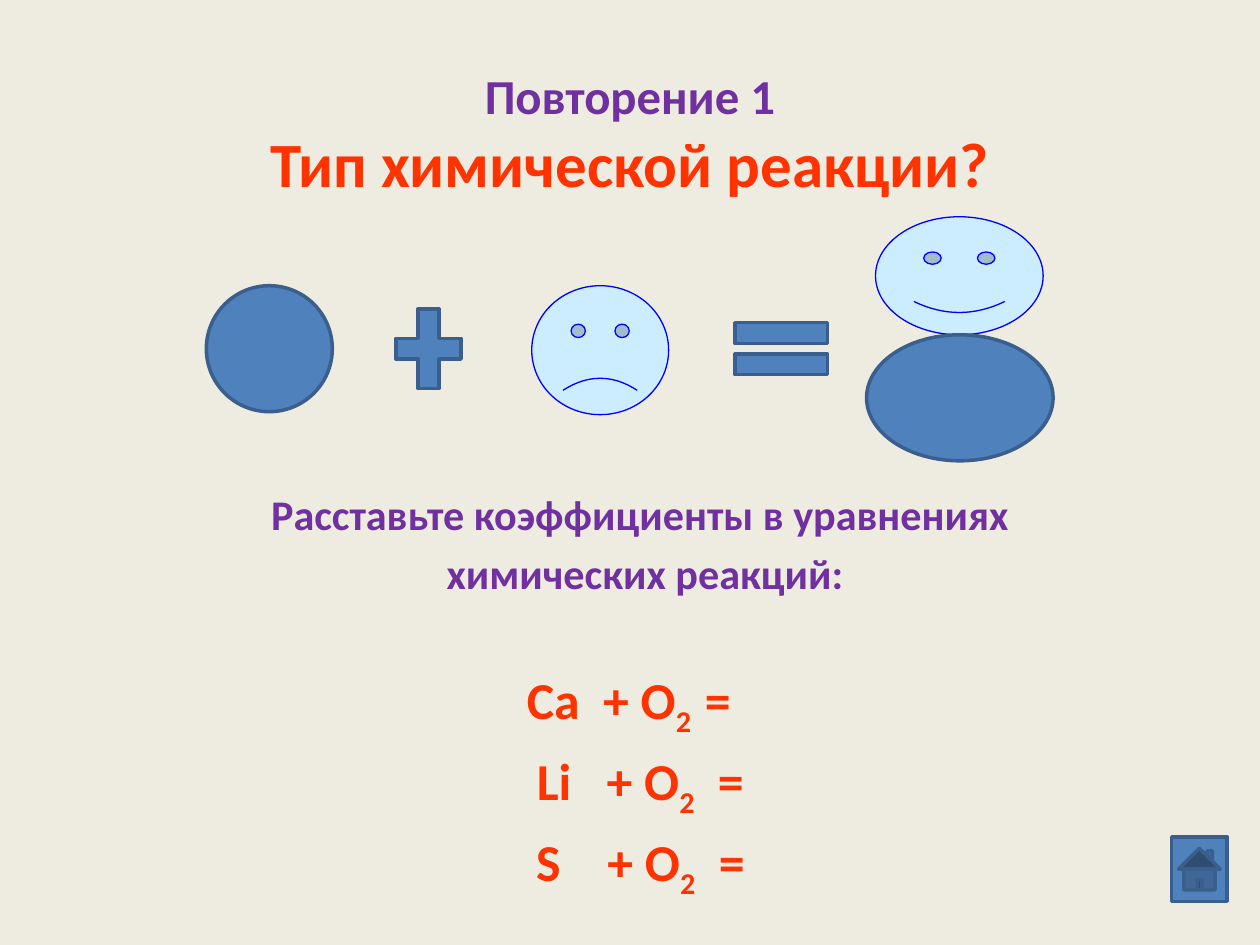
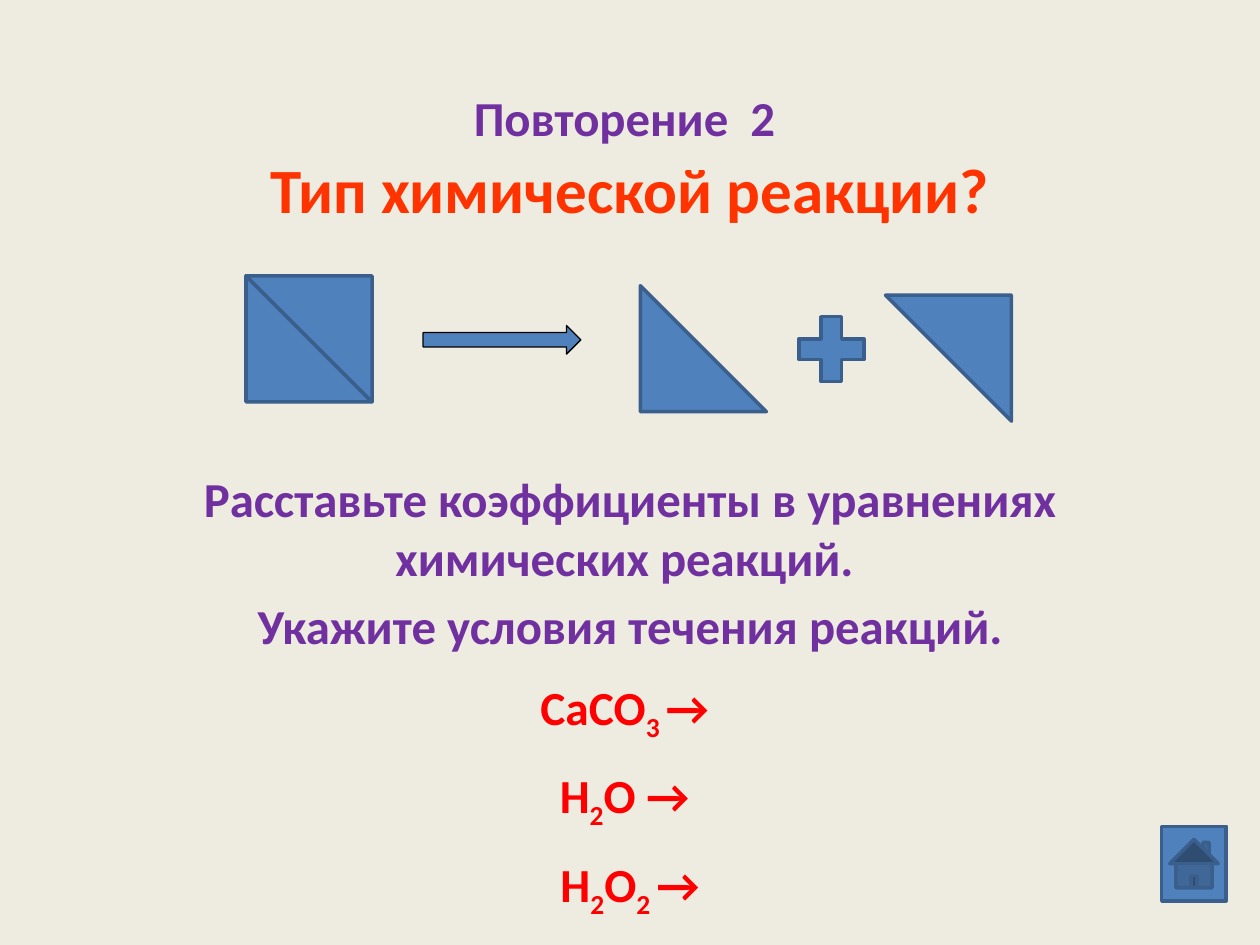
import pptx
import pptx.dml.color
import pptx.enum.shapes
import pptx.enum.text
import pptx.util

Cm = pptx.util.Cm
Pt = pptx.util.Pt
Kind = pptx.enum.shapes.MSO_SHAPE

BACKGROUND = "EEECE1"
PURPLE = "7030A0"
ORANGE = "FF3300"
RED = "FF0000"
BLUE_STYLE = ("4F81BD", "3A5F8C", 2)
FACE_STYLE = ("CCECFF", "0000FF", 0.75)
ARROW_STYLE = ("4F81BD", "000000", 0.75)
QUESTION = "Тип химической реакции?"


def color(hex_string):
    return pptx.dml.color.RGBColor.from_string(hex_string)


def fill_text(text_frame, lines):
    """Write (text, size, colour, space before) lines; parts between bars are subscripts."""
    text_frame.word_wrap = True
    text_frame.auto_size = pptx.enum.text.MSO_AUTO_SIZE.NONE
    for index, (text, size, text_color, space_before) in enumerate(lines):
        paragraph = text_frame.add_paragraph() if index else text_frame.paragraphs[0]
        paragraph.alignment = pptx.enum.text.PP_ALIGN.CENTER
        paragraph.space_before = Pt(space_before)
        paragraph.font.name = "Calibri"
        paragraph.font.size = Pt(size)
        paragraph.font.bold = True
        paragraph.font.color.rgb = color(text_color)
        for part_index, part in enumerate(text.split("|")):
            run = paragraph.add_run()
            run.text = part
            if part_index % 2:
                run.font._element.set("baseline", "-25000")


# Each shape: kind, (left, top, width, height) in cm, style, rotation, first adjustment
slide_plans = [
    {
        "title_box": (1.9, 1, 21.6, 3.18),
        "title_top_margin": 0.3,
        "title": [("Повторение 1", 27.9, PURPLE, 0), (QUESTION, 36, ORANGE, 0)],
        "body_box": (2.4, 9.72, 21.02, 8.74),
        "body": [
            ("Расставьте коэффициенты в уравнениях", 24.1, PURPLE, 4.8),
            (" химических реакций:", 24.1, PURPLE, 4.8),
            ("Ca  + O|2  |=  ", 29.6, ORANGE, 40),
            ("Li   + O|2|  =", 29.6, ORANGE, 5.9),
            ("S    + O|2|  =", 29.6, ORANGE, 5.9),
        ],
        "shapes": [
            (Kind.OVAL, (4.16, 5.76, 2.54, 2.54), BLUE_STYLE, 0, None),
            (Kind.SMILEY_FACE, (10.72, 5.76, 2.76, 2.6), FACE_STYLE, 0, -0.047),
            (Kind.SMILEY_FACE, (17.65, 4.37, 3.38, 2.38), FACE_STYLE, 0, 0.047),
            (Kind.OVAL, (17.47, 6.75, 3.76, 2.54), BLUE_STYLE, 0, None),
            (Kind.MATH_PLUS, (7.75, 5.94, 1.78, 2.18), BLUE_STYLE, 0, None),
            (Kind.MATH_EQUAL, (14.48, 6.14, 2.54, 1.78), BLUE_STYLE, 0, None),
            (Kind.ACTION_BUTTON_HOME, (23.62, 16.87, 1.12, 1.3), BLUE_STYLE, 0, None),
        ],
    },
    {
        "title_box": (1.9, 1, 21.6, 3.76),
        "title_top_margin": 0.69,
        "title": [("Повторение  2 ", 27.9, PURPLE, 0), (QUESTION, 36, ORANGE, 2)],
        "body_box": (3.81, 9.32, 17.78, 9.12),
        "body": [
            ("Расставьте коэффициенты в уравнениях химических реакций. ", 27.9, PURPLE, 5.6),
            ("Укажите условия течения реакций.", 27.9, PURPLE, 5.6),
            ("CaCO|3 |→ ", 27.1, RED, 13.6),
            ("H|2|O → ", 27.1, RED, 13.6),
            ("H|2|O|2 |→", 27.1, RED, 13.6),
        ],
        "shapes": [
            (Kind.RIGHT_TRIANGLE, (4.96, 5.56, 2.54, 2.54), BLUE_STYLE, 0, None),
            (Kind.RIGHT_TRIANGLE, (4.96, 5.56, 2.54, 2.54), BLUE_STYLE, 180, None),
            (Kind.RIGHT_ARROW, (8.53, 6.56, 3.18, 0.58), ARROW_STYLE, 0, None),
            (Kind.RIGHT_TRIANGLE, (12.91, 5.76, 2.54, 2.54), BLUE_STYLE, 0, None),
            (Kind.RIGHT_TRIANGLE, (17.85, 5.95, 2.54, 2.54), BLUE_STYLE, 180, None),
            (Kind.MATH_PLUS, (15.87, 6.15, 1.78, 1.78), BLUE_STYLE, 0, None),
            (Kind.ACTION_BUTTON_HOME, (23.42, 16.66, 1.3, 1.5), BLUE_STYLE, 0, None),
        ],
    },
]

presentation = pptx.Presentation()
presentation.slide_width = Cm(25.4)
presentation.slide_height = Cm(19.05)
background_fill = presentation.slide_master.background.fill
background_fill.solid()
background_fill.fore_color.rgb = color(BACKGROUND)

for plan in slide_plans:
    slide = presentation.slides.add_slide(presentation.slide_layouts[0])
    title, body = slide.placeholders
    for placeholder, name in ((title, "title"), (body, "body")):
        left, top, width, height = map(Cm, plan[name + "_box"])
        placeholder.left, placeholder.top = left, top
        placeholder.width, placeholder.height = width, height
        fill_text(placeholder.text_frame, plan[name])
    title.text_frame.vertical_anchor = pptx.enum.text.MSO_ANCHOR.MIDDLE
    title.text_frame.margin_top = Cm(plan["title_top_margin"])

    for kind, box, (fill_color, line_color, line_width), rotation, adjustment in plan["shapes"]:
        shape = slide.shapes.add_shape(kind, *map(Cm, box))
        shape.shadow.inherit = False
        shape.rotation = rotation
        shape.fill.solid()
        shape.fill.fore_color.rgb = color(fill_color)
        shape.line.color.rgb = color(line_color)
        shape.line.width = Pt(line_width)
        if adjustment is not None:
            shape.adjustments[0] = adjustment

presentation.save("out.pptx")
